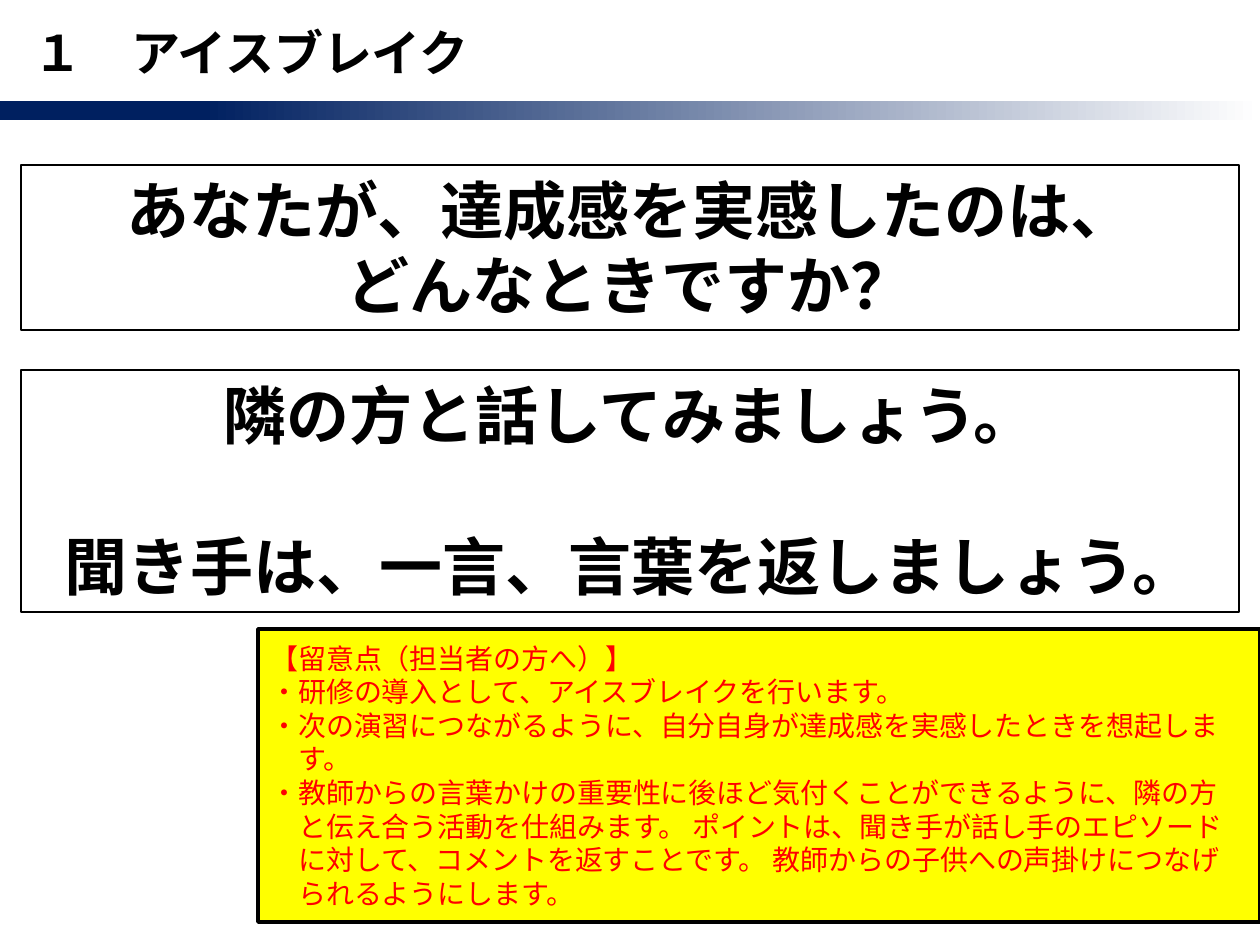
from dataclasses import dataclass

from pptx import Presentation
from pptx.dml.color import RGBColor
from pptx.enum.shapes import MSO_SHAPE as Shape
from pptx.enum.text import MSO_ANCHOR as Anchor, PP_ALIGN as Align
from pptx.util import Emu, Pt

EMU_PER_PX = 914400 / 126
COLORS = {
    "navy": "002060",
    "white": "FFFFFF",
    "black": "000000",
    "yellow": "FFFF00",
    "red": "FF0000",
}


@dataclass(frozen=True)
class Panel:
    """A block of text with its place and look."""

    box: tuple[int, int, int, int]
    lines: tuple[str, ...]
    size: int
    font: str = "Arial"
    color: str = "black"
    bold: bool = True
    align: Align = Align.CENTER
    anchor: Anchor = Anchor.TOP
    fill: str | None = None
    border: float | None = 0.75
    last_gap: int = 0


PANELS = (
    Panel((21, 165, 1218, 165),
          ("あなたが、達成感を実感したのは、", "どんなときですか？"), 36),
    Panel((21, 16, 1239, 72), ("１　アイスブレイク",), 28,
          align=Align.LEFT, border=None),
    Panel((21, 370, 1218, 242),
          ("隣の方と話してみましょう。", "聞き手は、一言、言葉を返しましょう。"),
          36, last_gap=43),
    Panel((258, 629, 1002, 293),
          ("【留意点（担当者の方へ）】",
           "・研修の導入として、アイスブレイクを行います。",
           "・次の演習につながるように、自分自身が達成感を実感したときを想起しま",
           "　す。",
           "・教師からの言葉かけの重要性に後ほど気付くことができるように、隣の方",
           "　と伝え合う活動を仕組みます。 ポイントは、聞き手が話し手のエピソード",
           "　に対して、コメントを返すことです。 教師からの子供への声掛けにつなげ",
           "　られるようにします。"),
          16, font="Calibri", color="red", bold=False, align=Align.LEFT,
          anchor=Anchor.MIDDLE, fill="yellow", border=2),
)


def px(length: int) -> Emu:
    """Turn pixels into EMU."""
    return Emu(round(length * EMU_PER_PX))


def rgb(name: str) -> RGBColor:
    """Look up a colour by name."""
    return RGBColor.from_string(COLORS[name])


def draw_bar(slide) -> None:
    """Draw the band that fades from navy to white."""
    bar = slide.shapes.add_shape(
        Shape.RECTANGLE, *map(px, (0, 101, 1260, 19)))
    bar.shadow.inherit = False
    bar.line.fill.background()
    bar.fill.gradient()
    bar.fill.gradient_angle = 180
    stops = (("white", 0), ("navy", 0.84))
    for stop, (color, position) in zip(bar.fill.gradient_stops, stops):
        stop.color.rgb = rgb(color)
        stop.position = position


def draw_panel(slide, panel: Panel) -> None:
    """Draw one panel with its text."""
    place = map(px, panel.box)
    if panel.border is None:
        block = slide.shapes.add_textbox(*place)
    else:
        block = slide.shapes.add_shape(Shape.RECTANGLE, *place)
        block.shadow.inherit = False
        block.line.color.rgb = rgb("black")
        block.line.width = Pt(panel.border)
        if panel.fill:
            block.fill.solid()
            block.fill.fore_color.rgb = rgb(panel.fill)
        else:
            block.fill.background()
    frame = block.text_frame
    frame.word_wrap = True
    frame.vertical_anchor = panel.anchor
    frame.text = "\n".join(panel.lines)
    for line in frame.paragraphs:
        line.alignment = panel.align
        for run in line.runs:
            run.font.name = panel.font
            run.font.size = Pt(panel.size)
            run.font.bold = panel.bold
            run.font.color.rgb = rgb(panel.color)
    if panel.last_gap:
        frame.paragraphs[-1].space_before = Pt(panel.last_gap)


def main() -> None:
    """Build the ice-breaker slide and save it."""
    deck = Presentation()
    deck.slide_width, deck.slide_height = px(1260), px(945)
    slide = deck.slides.add_slide(deck.slide_layouts[6])
    draw_bar(slide)
    for panel in PANELS:
        draw_panel(slide, panel)
    deck.save("out.pptx")


if __name__ == "__main__":
    main()
